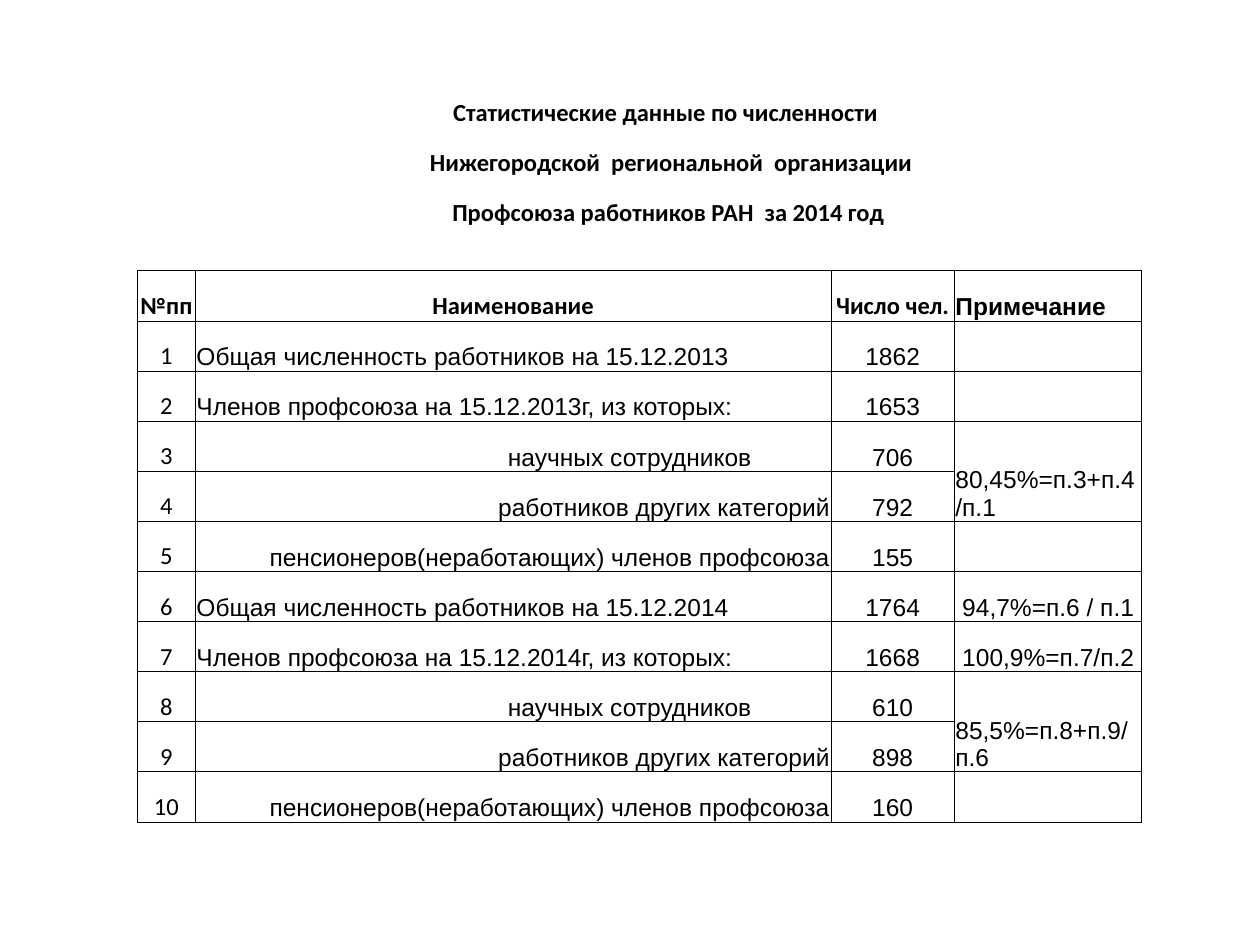
"""Builds a slide with a table of trade union membership statistics."""
from typing import NamedTuple

from lxml import etree
from pptx import Presentation
from pptx import util as u
from pptx.dml.color import RGBColor
from pptx.enum import text
from pptx.oxml.ns import qn

BLACK = "000000"
LEFT, CENTER, RIGHT = text.PP_ALIGN.LEFT, text.PP_ALIGN.CENTER, text.PP_ALIGN.RIGHT
COLUMN_WIDTHS = [1.17, 2.33, 3.82, 4.0, 2.66, 2.49, 3.77]
ROW_HEIGHT, GAP_HEIGHT = 1.01, 0.86
NUMBER, NAME, NAME_END, COUNT, NOTE = 0, 1, 4, 5, 6
GAP_ROW, HEADER_ROW = 3, 4
FIRST_ROW = HEADER_ROW + 1
MARGIN = 0.02


class Style(NamedTuple):
    font: str = "Arial"
    bold: bool = False
    align: text.PP_ALIGN = LEFT
    indent: float = MARGIN


class Entry(NamedTuple):
    name: str
    count: int
    style: Style = Style()
    note: str = ""
    note_rows: int = 1


HEADING = Style("Calibri", True, CENTER)
ORDINAL = Style("Calibri", False, CENTER)
VALUE = Style(align=CENTER)
INDENTED = Style(indent=6.3)
FLUSH_RIGHT = Style(align=RIGHT)

TITLES = [
    "Статистические данные по численности ",
    " Нижегородской  региональной  организации",
    "Профсоюза работников РАН  за 2014 год",
]
HEADERS = [
    (NUMBER, "№пп", HEADING),
    (NAME, "Наименование", HEADING),
    (COUNT, "Число чел.", HEADING),
    (NOTE, "Примечание", Style(bold=True)),
]
SCIENTISTS = "научных сотрудников"
OTHERS = "работников других категорий"
PENSIONERS = "пенсионеров(неработающих) членов профсоюза"
ENTRIES = [
    Entry("Общая численность работников на 15.12.2013", 1862),
    Entry("Членов профсоюза на 15.12.2013г, из которых:", 1653),
    Entry(SCIENTISTS, 706, INDENTED, "80,45%=п.3+п.4/п.1", 2),
    Entry(OTHERS, 792, FLUSH_RIGHT),
    Entry(PENSIONERS, 155, FLUSH_RIGHT),
    Entry("Общая численность работников на 15.12.2014", 1764, note=" 94,7%=п.6 / п.1"),
    Entry("Членов профсоюза на 15.12.2014г, из которых:", 1668, note=" 100,9%=п.7/п.2"),
    Entry(SCIENTISTS, 610, INDENTED, "85,5%=п.8+п.9/п.6", 2),
    Entry(OTHERS, 898, FLUSH_RIGHT),
    Entry(PENSIONERS, 160, FLUSH_RIGHT),
]


def color(value: str) -> RGBColor:
    return RGBColor.from_string(value)


def set_borders(cell, visible_sides: str) -> None:
    properties = cell._tc.get_or_add_tcPr()
    for side in "LRTB":
        line = etree.SubElement(properties, qn(f"a:ln{side}"), w=str(u.Pt(0.5)))
        if side in visible_sides:
            fill = etree.SubElement(line, qn("a:solidFill"))
            etree.SubElement(fill, qn("a:srgbClr"), val=BLACK)
        else:
            etree.SubElement(line, qn("a:noFill"))


def format_cell(cell, visible_sides: str) -> None:
    set_borders(cell, visible_sides)
    cell.fill.background()
    cell.margin_left = cell.margin_right = cell.margin_top = u.Cm(MARGIN)
    cell.margin_bottom = 0
    cell.vertical_anchor = text.MSO_ANCHOR.BOTTOM


def write(cell, content: str, style: Style) -> None:
    cell.text_frame.text = content
    cell.margin_left = u.Cm(style.indent)
    paragraph = cell.text_frame.paragraphs[0]
    paragraph.alignment = style.align
    for run in paragraph.runs:
        run.font.name = style.font
        run.font.size = u.Pt(14)
        run.font.bold = style.bold
        run.font.color.rgb = color(BLACK)


def add_statistics_table(slide):
    row_count = FIRST_ROW + len(ENTRIES)
    height = (row_count - 1) * ROW_HEIGHT + GAP_HEIGHT
    frame = slide.shapes.add_table(
        row_count, len(COLUMN_WIDTHS),
        u.Cm(2.77), u.Cm(1.57), u.Cm(sum(COLUMN_WIDTHS)), u.Cm(height))
    table = frame.table
    table.first_row = table.horz_banding = False
    for column, width in zip(table.columns, COLUMN_WIDTHS):
        column.width = u.Cm(width)
    for index, row in enumerate(table.rows):
        row.height = u.Cm(GAP_HEIGHT if index == GAP_ROW else ROW_HEIGHT)
        sides = "" if index < GAP_ROW else "B" if index == GAP_ROW else "LRTB"
        for cell in row.cells:
            format_cell(cell, sides)
    return table


def fill_table(table) -> None:
    for row, title in enumerate(TITLES):
        table.cell(row, NAME).merge(table.cell(row, NOTE))
        write(table.cell(row, NAME), title, HEADING)
    for row in range(HEADER_ROW, len(table.rows)):
        table.cell(row, NAME).merge(table.cell(row, NAME_END))
    for column, header, style in HEADERS:
        write(table.cell(HEADER_ROW, column), header, style)
    for number, entry in enumerate(ENTRIES, 1):
        row = HEADER_ROW + number
        write(table.cell(row, NUMBER), str(number), ORDINAL)
        write(table.cell(row, NAME), entry.name, entry.style)
        write(table.cell(row, COUNT), str(entry.count), VALUE)
        if entry.note_rows > 1:
            table.cell(row, NOTE).merge(table.cell(row + entry.note_rows - 1, NOTE))
        if entry.note:
            write(table.cell(row, NOTE), entry.note, Style())


def main() -> None:
    presentation = Presentation()
    presentation.slide_width, presentation.slide_height = u.Cm(25.4), u.Cm(19.05)
    slide = presentation.slides.add_slide(presentation.slide_layouts.get_by_name("Blank"))
    fill_table(add_statistics_table(slide))
    presentation.save("out.pptx")


if __name__ == "__main__":
    main()
